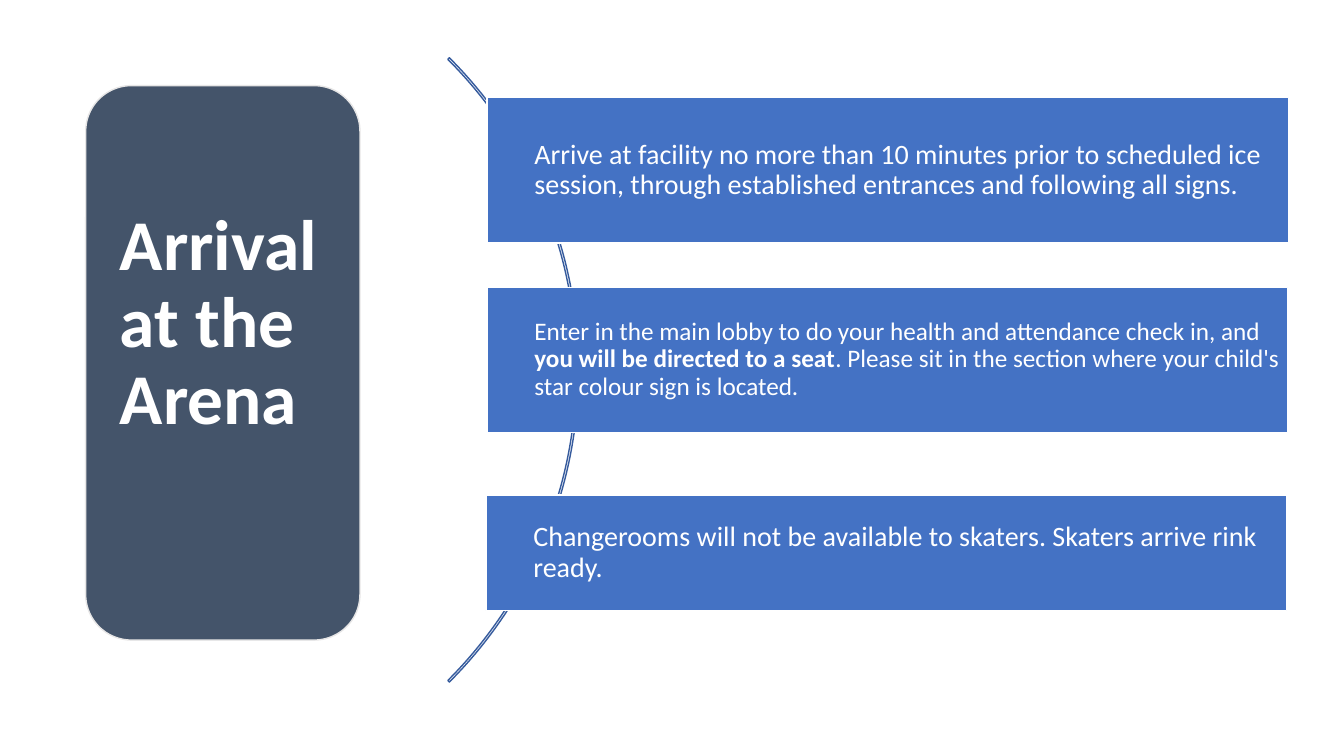
from pptx import Presentation
from pptx.dml.color import RGBColor
from pptx.enum.shapes import MSO_SHAPE
from pptx.enum.text import MSO_ANCHOR, PP_ALIGN
from pptx.util import Inches, Pt

RECT = MSO_SHAPE.RECTANGLE
ROUND = MSO_SHAPE.ROUNDED_RECTANGLE
ARC = MSO_SHAPE.BLOCK_ARC
MIDDLE = MSO_ANCHOR.MIDDLE
LEFT = PP_ALIGN.LEFT

WHITE, BLUE, NAVY = "FFFFFF", "4472C4", "44546A"
EDGE, GREY = "365B9D", "E7E6E6"


def color(code):
    return RGBColor.from_string(code)


class Board:
    font = "Calibri"

    def __init__(self, slide):
        self.shapes = slide.shapes

    def shape(self, kind, at, fill, line, adjust=()):
        item = self.shapes.add_shape(kind, *map(Inches, at))
        item.shadow.inherit = False
        if fill:
            item.fill.solid()
            item.fill.fore_color.rgb = color(fill)
        else:
            item.fill.background()
        item.line.color.rgb = color(line)
        item.line.width = Pt(1)
        for i, value in enumerate(adjust):
            item.adjustments[i] = value
        return item

    def text(self, item, runs, size, inset):
        """Write (words, bold) runs; inset is left, top, right, bottom."""
        frame = item.text_frame
        left, top, right, bottom = map(Inches, inset)
        form = {"word_wrap": True, "vertical_anchor": MIDDLE,
                "margin_left": left, "margin_top": top,
                "margin_right": right, "margin_bottom": bottom}
        for name, value in form.items():
            setattr(frame, name, value)
        para = frame.paragraphs[0]
        para.alignment = LEFT
        para.line_spacing = 0.9
        for words, bold in runs:
            run = para.add_run()
            run.text = words
            style = {"name": self.font, "size": Pt(size), "bold": bold}
            for name, value in style.items():
                setattr(run.font, name, value)
            run.font.color.rgb = color(WHITE)

    def label(self, at, runs, size, inset):
        self.text(self.shapes.add_textbox(*map(Inches, at)), runs, size, inset)

    def bar(self, at, runs, size):
        item = self.shape(RECT, at, BLUE, WHITE)
        self.text(item, runs, size, (0.47, 0.03, 0.03, 0.03))


def main():
    deck = Presentation()
    deck.slide_width, deck.slide_height = Inches(13.33), Inches(7.5)
    board = Board(deck.slides.add_slide(deck.slide_layouts[6]))

    # Title panel, with the words set above its middle
    board.shape(ROUND, (0.85, 0.85, 2.72, 5.5), NAVY, GREY)
    board.label((0.98, 0.99, 2.45, 5.23), [("Arrival at the Arena", True)],
                51, (0.21, 0.21, 0.21, 0.99))

    # Arc behind the bars
    board.shape(ARC, (-3.02, -0.71, 8.76, 8.76), None, EDGE,
                (189, 27, 0.0025))

    # Arrival steps
    steps = [
        ((4.83, 0.97, 7.95, 1.44), 20, [
            ("Arrive at facility no more than 10 minutes prior to scheduled "
             "ice session, through established entrances and following all "
             "signs.", False)]),
        ((4.83, 2.85, 7.94, 1.44), 18, [
            ("Enter in the main lobby to do your health and attendance "
             "check in, and ", False),
            ("you will be directed to a seat", True),
            (". Please sit in the section where your child's star colour "
             "sign is located.", False)]),
        ((4.82, 4.91, 7.94, 1.15), 20, [
            ("Changerooms will not be available to skaters. Skaters arrive "
             "rink ready.", False)]),
    ]
    for at, size, runs in steps:
        board.bar(at, runs, size)

    deck.save("out.pptx")


if __name__ == "__main__":
    main()
